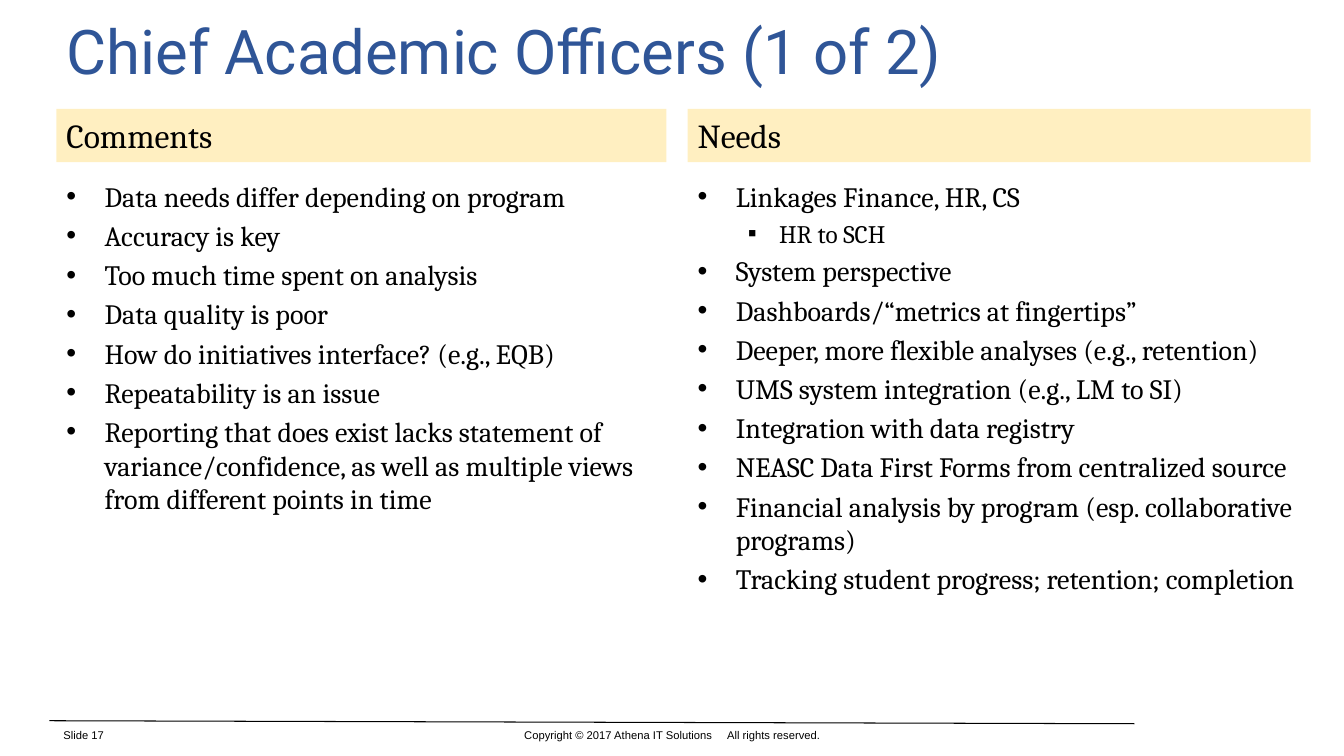
"""Build the Chief Academic Officers slide: comments and needs side by side."""
from lxml.etree import SubElement
from pptx import Presentation
from pptx.dml.color import RGBColor
from pptx.enum.shapes import MSO_CONNECTOR, MSO_SHAPE
from pptx.enum.text import MSO_ANCHOR, MSO_AUTO_SIZE, PP_ALIGN
from pptx.oxml.ns import qn
from pptx.util import Inches, Pt

COLORS = {"title": "2F5597", "band": "FFD966", "ink": "000000"}
LEFT, RIGHT, GUTTER = 0.56, 13.0, 0.21
BAND_TOP, BAND_HEIGHT, LIST_TOP, LIST_HEIGHT = 1.08, 0.53, 1.73, 5.27
FOOTER_TOP, FOOTER_HEIGHT = 7.18, 0.22
NEEDS_LEFT = 6.82
BULLETS = [("•", 0.38, 0.38, 20), ("▪", 0.81, 0.31, 18)]

columns = [
    (LEFT, NEEDS_LEFT - GUTTER - LEFT, "Comments", [
        (0, "Data needs differ depending on program"),
        (0, "Accuracy is key"),
        (0, "Too much time spent on analysis"),
        (0, "Data quality is poor"),
        (0, "How do initiatives interface? (e.g., EQB)"),
        (0, "Repeatability is an issue"),
        (0, "Reporting that does exist lacks statement of variance/confidence, "
            "as well as multiple views from different points in time"),
    ]),
    (NEEDS_LEFT, RIGHT - NEEDS_LEFT, "Needs", [
        (0, "Linkages Finance, HR, CS"),
        (1, "HR to SCH"),
        (0, "System perspective"),
        (0, "Dashboards/“metrics at fingertips”"),
        (0, "Deeper, more flexible analyses (e.g., retention)"),
        (0, "UMS system integration (e.g., LM to SI)"),
        (0, "Integration with data registry"),
        (0, "NEASC Data First Forms from centralized source"),
        (0, "Financial analysis by program (esp. collaborative programs)"),
        (0, "Tracking student progress; retention; completion"),
    ]),
]
footers = [
    (4.42, 4.5, PP_ALIGN.CENTER,
     "Copyright © 2017 Athena IT Solutions     All rights reserved."),
    (0.53, 1.71, PP_ALIGN.LEFT, "Slide 17"),
]


def write(paragraph, text, face, size, color="ink", align=PP_ALIGN.LEFT):
    paragraph.text = text
    paragraph.alignment = align
    formats = {"name": face, "size": Pt(size)}
    for attribute, value in formats.items():
        setattr(paragraph.runs[0].font, attribute, value)
    paragraph.runs[0].font.color.rgb = RGBColor.from_string(COLORS[color])


def prepare(shape, anchor):
    formats = {"word_wrap": True, "auto_size": MSO_AUTO_SIZE.NONE,
               "vertical_anchor": anchor}
    for attribute, value in formats.items():
        setattr(shape.text_frame, attribute, value)
    return shape.text_frame


deck = Presentation()
deck.slide_width, deck.slide_height = Inches(13.33), Inches(7.5)
slide = deck.slides.add_slide(deck.slide_layouts[5])

rule = slide.shapes.add_connector(
    MSO_CONNECTOR.STRAIGHT, Inches(0.49), Inches(7.15), Inches(11.25), Inches(7.18))
rule.line.color.rgb = RGBColor.from_string(COLORS["ink"])
rule.line.width = Pt(0.75)
SubElement(rule.line._ln.getparent(), qn("a:effectLst"))

title = slide.shapes.title
title.left, title.top = Inches(LEFT), Inches(0.11)
title.width, title.height = Inches(RIGHT - LEFT), Inches(0.76)
write(prepare(title, MSO_ANCHOR.MIDDLE).paragraphs[0],
      "Chief Academic Officers (1 of 2)", "Roboto", 44, "title")

for left, width, heading, items in columns:
    band = slide.shapes.add_shape(
        MSO_SHAPE.RECTANGLE, Inches(left), Inches(BAND_TOP),
        Inches(width), Inches(BAND_HEIGHT))
    band.shadow.inherit = False
    band.line.fill.background()
    band.fill.solid()
    band.fill.fore_color.rgb = RGBColor.from_string(COLORS["band"])
    tint = band.fill._xPr.find(qn("a:solidFill"))[0]
    SubElement(tint, qn("a:alpha"), val="40000")
    write(prepare(band, MSO_ANCHOR.MIDDLE).paragraphs[0], heading, "Cambria", 24)

    listing = slide.shapes.add_textbox(
        Inches(left), Inches(LIST_TOP), Inches(width), Inches(LIST_HEIGHT))
    frame = prepare(listing, MSO_ANCHOR.TOP)
    for index, (level, text) in enumerate(items):
        paragraph = frame.add_paragraph() if index else frame.paragraphs[0]
        mark, margin, hang, size = BULLETS[level]
        paragraph.level = level
        paragraph.space_before = Pt(0.2 * size if index else 0)
        properties = paragraph._p.get_or_add_pPr()
        properties.set("marL", str(Inches(margin)))
        properties.set("indent", str(-Inches(hang)))
        SubElement(properties, qn("a:buFont"), typeface="Arial")
        SubElement(properties, qn("a:buChar"), char=mark)
        write(paragraph, text, "Cambria", size)

for left, width, align, text in footers:
    footer = slide.shapes.add_textbox(
        Inches(left), Inches(FOOTER_TOP), Inches(width), Inches(FOOTER_HEIGHT))
    write(prepare(footer, MSO_ANCHOR.MIDDLE).paragraphs[0], text, "Arial", 8, align=align)

deck.save("out.pptx")
